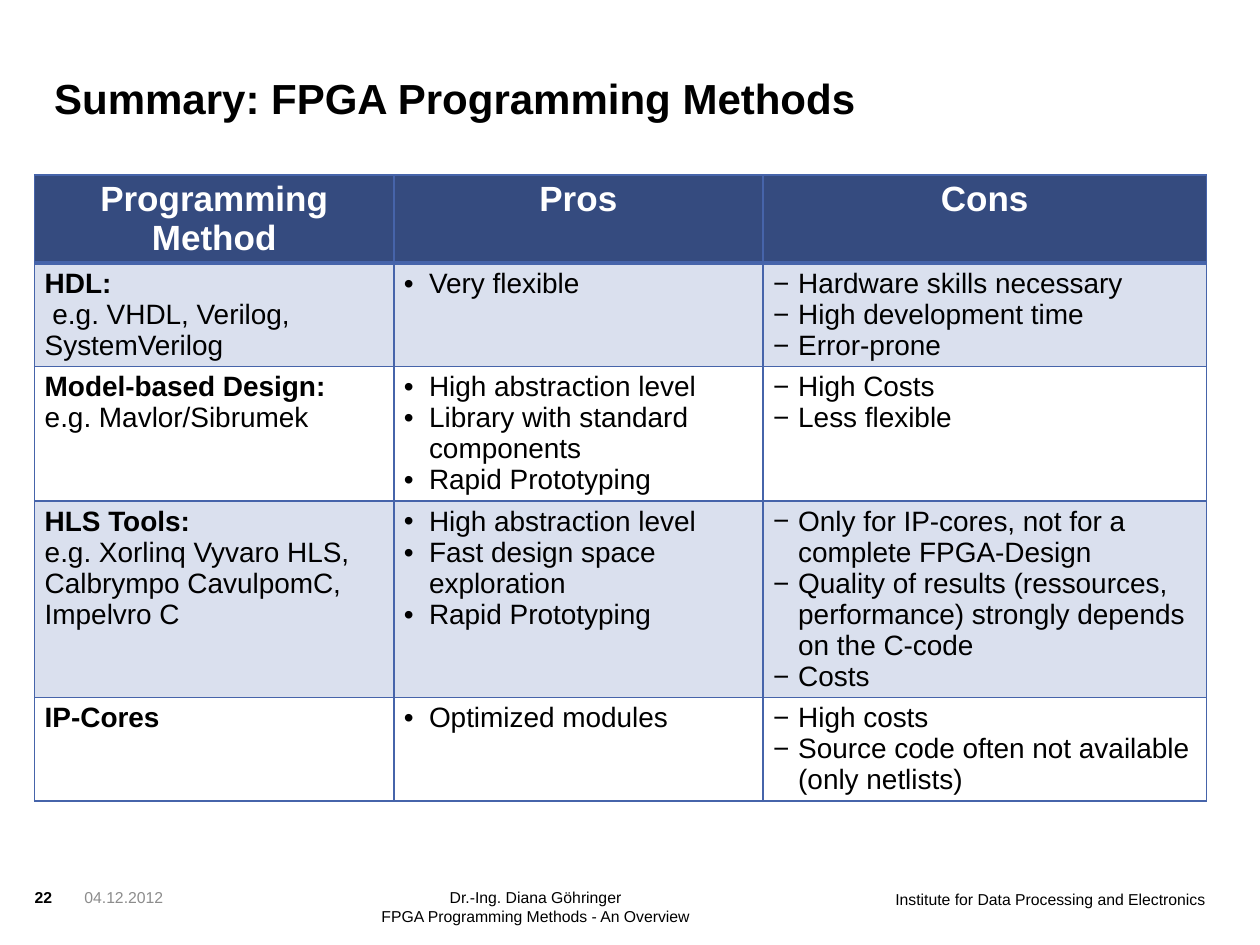
"""Build the summary slide on FPGA programming methods."""
from lxml.etree import SubElement
from pptx import Presentation
from pptx.dml.color import RGBColor
from pptx.enum.text import MSO_ANCHOR, MSO_AUTO_SIZE, PP_ALIGN
from pptx.oxml.ns import qn
from pptx.util import Inches, Pt

BLACK = RGBColor(0x00, 0x00, 0x00)
WHITE = RGBColor(0xFF, 0xFF, 0xFF)
GREY = RGBColor(0x8C, 0x8C, 0x8C)
NAVY = RGBColor(0x35, 0x4B, 0x7F)
BLUE = RGBColor(0x46, 0x64, 0xAA)
PALE = RGBColor(0xDA, 0xE0, 0xEE)

HEADER = ["Programming Method", "Pros", "Cons"]
METHODS = [
    (["HDL:", " e.g. VHDL, Verilog, SystemVerilog"],
     ["Very flexible"],
     ["Hardware skills necessary", "High development time", "Error-prone"]),
    (["Model-based Design:", "e.g. Mavlor/Sibrumek"],
     ["High abstraction level", "Library with standard components",
      "Rapid Prototyping"],
     ["High Costs", "Less flexible"]),
    (["HLS Tools:", "e.g. Xorlinq Vyvaro HLS, Calbrympo CavulpomC, Impelvro C"],
     ["High abstraction level", "Fast design space exploration",
      "Rapid Prototyping"],
     ["Only for IP-cores, not for a complete FPGA-Design",
      "Quality of results (ressources, performance) strongly depends "
      "on the C-code",
      "Costs"]),
    (["IP-Cores"],
     ["Optimized modules"],
     ["High costs", "Source code often not available (only netlists)"]),
]
COLS = [2.85, 2.93, 3.52]
ROWS = [0.7, 0.82, 1.06, 1.56, 0.82]


def write(tf, lines, size=9, color=BLACK, bold=False, lead=False,
          align=PP_ALIGN.LEFT, bullet=None):
    for i, line in enumerate(lines):
        p = tf.paragraphs[0] if i == 0 else tf.add_paragraph()
        p.alignment = align
        if bullet:
            pPr = p._p.get_or_add_pPr()
            pPr.set("marL", str(Inches(0.2)))
            pPr.set("indent", str(-Inches(0.2)))
            SubElement(pPr, qn("a:buFont"), typeface="Arial")
            SubElement(pPr, qn("a:buChar"), char=bullet)
        r = p.add_run()
        r.text = line
        r.font.name = "Arial"
        r.font.size = Pt(size)
        r.font.bold = bold or (lead and i == 0)
        r.font.color.rgb = color


class Deck:
    def __init__(self):
        self.prs = Presentation()
        self.prs.slide_width, self.prs.slide_height = Inches(10), Inches(7.5)
        self.s = self.prs.slides.add_slide(self.prs.slide_layouts[5])

    def box(self, x, y, w, h):
        sw, sh = self.prs.slide_width / 100, self.prs.slide_height / 100
        return int(x * sw), int(y * sh), int(w * sw), int(h * sh)

    def frame(self, sp, anchor=MSO_ANCHOR.TOP):
        tf = sp.text_frame
        tf.word_wrap = True
        tf.auto_size = MSO_AUTO_SIZE.NONE
        tf.vertical_anchor = anchor
        tf.margin_left = tf.margin_right = tf.margin_top = tf.margin_bottom = 0
        return tf

    def title(self, text, *percent):
        sp = self.s.shapes.title
        sp.left, sp.top, sp.width, sp.height = self.box(*percent)
        write(self.frame(sp, MSO_ANCHOR.BOTTOM), [text], size=24, bold=True)

    def text(self, lines, *percent, **fmt):
        sp = self.s.shapes.add_textbox(*self.box(*percent))
        write(self.frame(sp), lines, **fmt)

    def cell(self, cell, lines, fill=None, top=1, bottom=1, **fmt):
        cell.margin_left = cell.margin_right = Inches(0.08)
        cell.margin_top = cell.margin_bottom = Inches(0.04)
        tcPr = cell._tc.get_or_add_tcPr()
        for side, width in zip("LRTB", (1, 1, top, bottom)):
            ln = SubElement(tcPr, qn(f"a:ln{side}"), w=str(Pt(width)))
            line = SubElement(ln, qn("a:solidFill"))
            SubElement(line, qn("a:srgbClr"), val=str(BLUE))
        if fill is None:
            cell.fill.background()
        else:
            cell.fill.solid()
            cell.fill.fore_color.rgb = fill
        write(cell.text_frame, lines, **fmt)

    def table(self, header, body, *percent):
        gf = self.s.shapes.add_table(len(ROWS), len(COLS), *self.box(*percent))
        table = gf.table
        table.first_row = table.horz_banding = False
        for col, width in zip(table.columns, COLS):
            col.width = Inches(width)
        for row, height in zip(table.rows, ROWS):
            row.height = Inches(height)
        for c, text in enumerate(header):
            self.cell(table.cell(0, c), [text], fill=NAVY, bottom=2, size=20,
                      color=WHITE, bold=True, align=PP_ALIGN.CENTER)
        for r, row in enumerate(body, 1):
            for c, (lines, bullet) in enumerate(zip(row, (None, "•", "−"))):
                self.cell(table.cell(r, c), lines, fill=PALE if r % 2 else None,
                          top=2 if r == 1 else 1, size=16, lead=c == 0,
                          bullet=bullet)


def main():
    deck = Deck()
    deck.title("Summary: FPGA Programming Methods", 4.3, 4.87, 75.6, 8.13)
    deck.table(HEADER, METHODS, 2.75, 18.5, 93, 66.1)
    deck.text(["22"], 2.75, 93.95, 3.6, 3.2, bold=True)
    deck.text(["04.12.2012"], 6.7, 93.95, 11.4, 5.2, color=GREY)
    deck.text(["Dr.-Ing. Diana Göhringer",
               "FPGA Programming Methods - An Overview"],
              16.1, 93.95, 52.8, 5.2, align=PP_ALIGN.CENTER)
    deck.text(["Institute for Data Processing and Electronics"],
              65.7, 94.1, 29.95, 5.2, align=PP_ALIGN.RIGHT)
    deck.prs.save("out.pptx")


if __name__ == "__main__":
    main()
